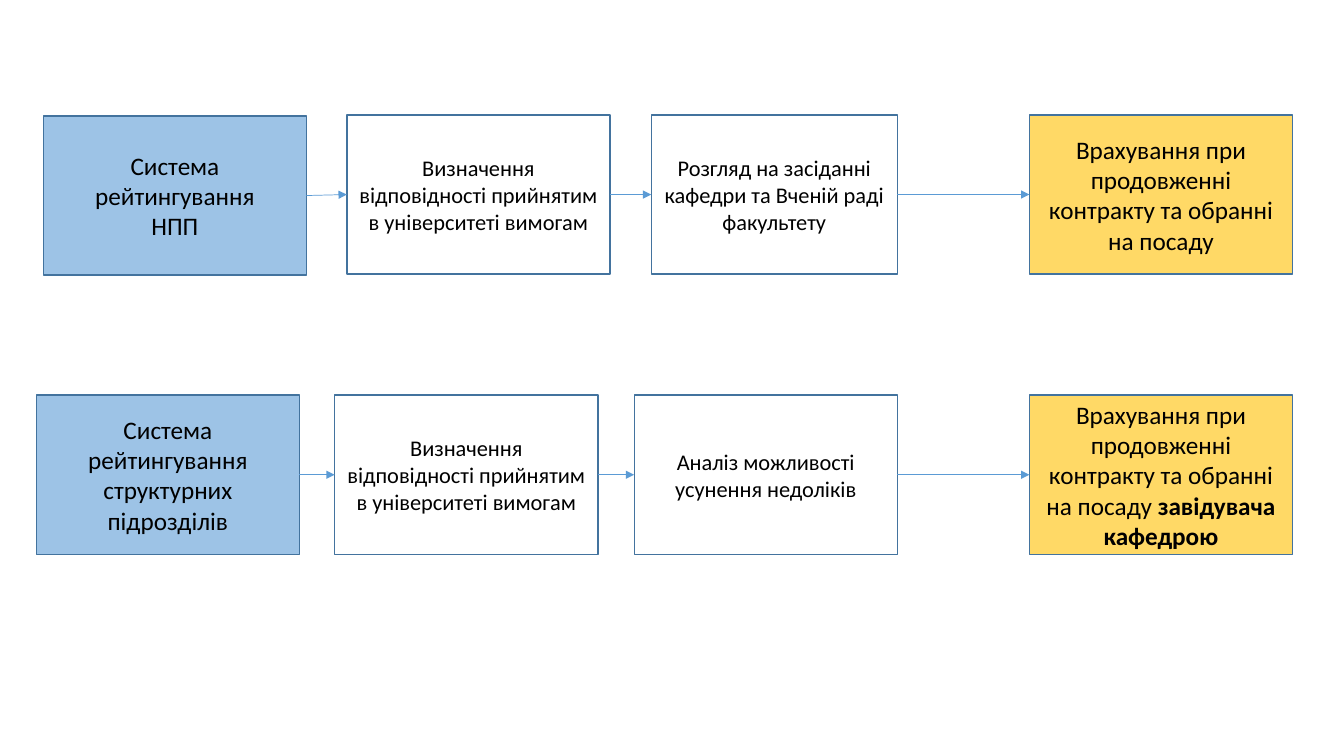
from lxml import etree
from pptx import Presentation
from pptx import util as u
from pptx.dml.color import RGBColor
from pptx.enum import shapes, text
from pptx.oxml.ns import qn

COLORS = {"start": "9DC3E6", "step": "FFFFFF", "result": "FFD966",
          "border": "43739E", "arrow": "5B9BD5", "text": "000000"}
SIZES = {"start": 18, "step": 16, "result": 18}
BOX_W, BOX_H = 2.61, 1.58
CRITERIA = [["Визначення відповідності прийнятим в університеті вимогам"]]
RENEWAL = "Врахування при продовженні контракту та обранні на посаду"

STAFF_FLOW = [
    ("start", 0.43, 1.15, BOX_W, [["Система рейтингування"], ["НПП"]]),
    ("step", 3.44, 1.14, BOX_W, CRITERIA),
    ("step", 6.46, 1.14, 2.44,
     [["Розгляд на засіданні кафедри та Вченій раді факультету"]]),
    ("result", 10.21, 1.14, BOX_W, [[RENEWAL]]),
]
UNIT_FLOW = [
    ("start", 0.36, 3.92, BOX_W,
     [["Система рейтингування структурних підрозділів"]]),
    ("step", 3.32, 3.92, BOX_W, CRITERIA),
    ("step", 6.29, 3.92, BOX_W, [["Аналіз можливості усунення недоліків"]]),
    ("result", 10.21, 3.92, BOX_W, [[RENEWAL + " ", "завідувача кафедрою"]]),
]


class FlowSlide:
    """Draws styled boxes and arrows on one slide."""

    def __init__(self, slide, font="Calibri"):
        self.shapes = slide.shapes
        self.font = font

    def color(self, name):
        return RGBColor.from_string(COLORS[name])

    def outline(self, line, name, width):
        line.color.rgb = self.color(name)
        line.width = u.Pt(width)

    def box(self, kind, x, y, w, paragraphs):
        sp = self.shapes.add_shape(
            shapes.MSO_SHAPE.RECTANGLE,
            *(u.Inches(v) for v in (x, y, w, BOX_H)))
        sp.shadow.inherit = False
        sp.fill.solid()
        sp.fill.fore_color.rgb = self.color(kind)
        self.outline(sp.line, "border", 1)
        tf = sp.text_frame
        tf.word_wrap = True
        tf.vertical_anchor = text.MSO_ANCHOR.MIDDLE
        for i, runs in enumerate(paragraphs):
            p = tf.add_paragraph() if i else tf.paragraphs[0]
            p.alignment = text.PP_ALIGN.CENTER
            for j, words in enumerate(runs):
                r = p.add_run()
                r.text = words
                style = {"name": self.font, "size": u.Pt(SIZES[kind]),
                         "bold": j > 0}
                for key, value in style.items():
                    setattr(r.font, key, value)
                r.font.color.rgb = self.color("text")
        return sp

    def arrow(self, source, target):
        cn = self.shapes.add_connector(
            shapes.MSO_CONNECTOR.STRAIGHT, 0, 0, 0, 0)
        cn.begin_connect(source, 3)
        cn.end_connect(target, 1)
        self.outline(cn.line, "arrow", 0.5)
        etree.SubElement(cn.line._get_or_add_ln(), qn("a:tailEnd"),
                         type="triangle")
        etree.SubElement(cn._element.spPr, qn("a:effectLst"))

    def flow(self, steps):
        boxes = [self.box(*step) for step in steps]
        for source, target in zip(boxes, boxes[1:]):
            self.arrow(source, target)


def main():
    prs = Presentation()
    prs.slide_width, prs.slide_height = u.Inches(13.33), u.Inches(7.5)
    s = FlowSlide(prs.slides.add_slide(prs.slide_layouts[6]))
    for steps in (STAFF_FLOW, UNIT_FLOW):
        s.flow(steps)
    prs.save("out.pptx")


if __name__ == "__main__":
    main()
